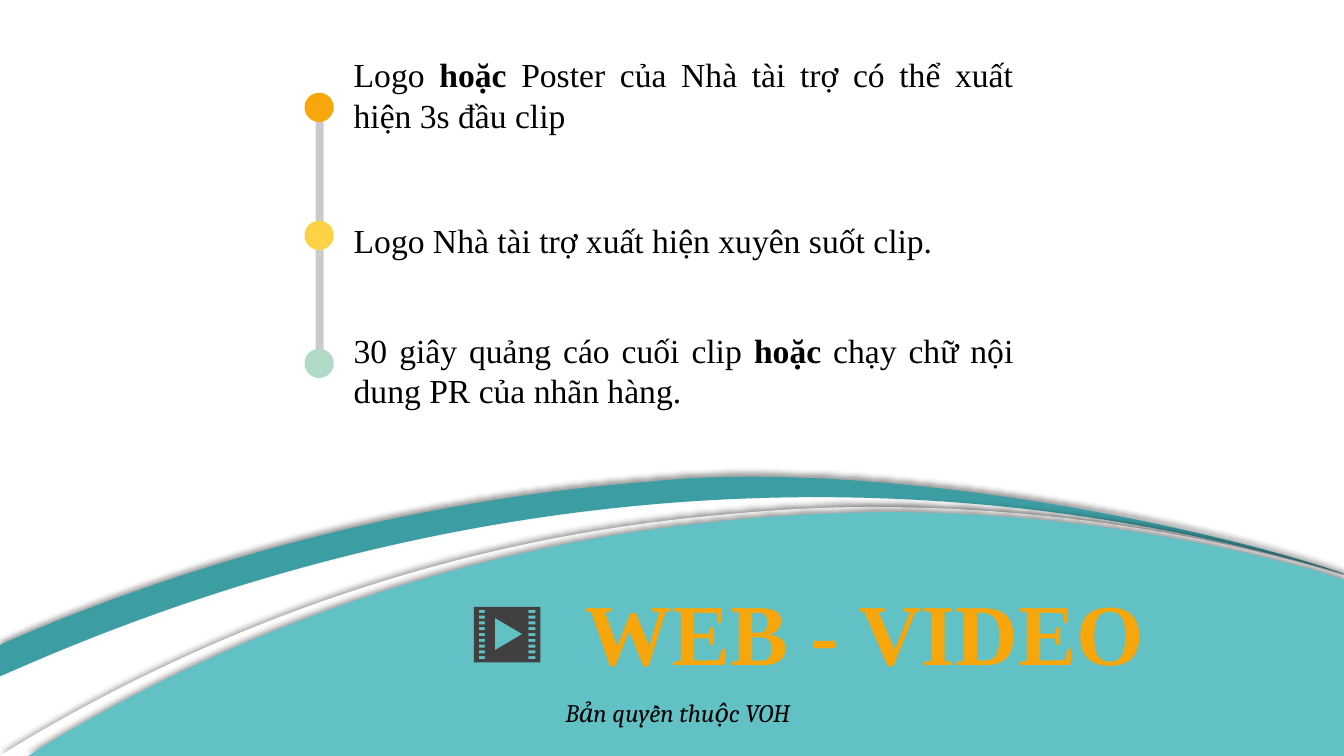
"""Build the WEB - VIDEO sponsorship slide."""
from lxml.etree import SubElement
from pptx import Presentation
from pptx.dml.color import RGBColor
from pptx.enum.shapes import MSO_SHAPE
from pptx.enum.text import MSO_AUTO_SIZE, PP_ALIGN
from pptx.oxml.ns import qn
from pptx.util import Inches, Pt

BLACK = RGBColor(0x00, 0x00, 0x00)
WHITE = RGBColor(0xFF, 0xFF, 0xFF)
DARK = RGBColor(0x40, 0x40, 0x40)
GREY = RGBColor(0xCB, 0xCB, 0xCB)
ORANGE = RGBColor(0xF7, 0xA6, 0x0B)
YELLOW = RGBColor(0xFD, 0xD2, 0x47)
MINT = RGBColor(0xB1, 0xD9, 0xC7)
TEAL = RGBColor(0x62, 0xC1, 0xC5)
DEEP = RGBColor(0x3C, 0x9D, 0xA2)
SERIF = "Times New Roman"

POINTS = [
    (0.49, 0.91, [("Logo ", False), ("hoặc ", True),
                  ("Poster của Nhà tài trợ có thể xuất hiện 3s đầu clip ", False)]),
    (2.13, 0.5, [("Logo Nhà tài trợ xuất hiện xuyên suốt clip.", False)]),
    (3.22, 0.91, [("30 giây quảng cáo cuối clip ", False), ("hoặc", True),
                  (" chạy chữ nội dung PR của nhãn hàng.", False)]),
]
TITLE = "WEB - VIDEO"
RIGHTS = "Bản quyền thuộc VOH"

DOTS = [ORANGE, YELLOW, MINT]
DOT_TOP, DOT_STEP, DOT_SIZE = 0.92, 1.27, 0.29

BAND = [(7.34, 4.73), (9.53, 4.71, 12.18, 5.28, 13.41, 5.72),
        (9, 4.38, 4.38, 4.79, 0.16, 6.64), (0, 6.71), (0, 6.4), (0.06, 6.37),
        (2.04, 5.51, 4.24, 4.95, 6.43, 4.78), (6.72, 4.75, 7.03, 4.73, 7.34, 4.73)]
RIM = [(8.64, 5.03), (10.15, 5.03, 11.63, 5.23, 13.03, 5.62), (13.33, 5.71),
       (13.33, 7.5), (0, 7.5), (0.14, 7.41), (2.21, 6.16, 4.58, 5.34, 7.13, 5.11),
       (7.64, 5.06, 8.14, 5.03, 8.64, 5.03)]
HILL = [(8.74, 5.08), (10.22, 5.08, 11.66, 5.28, 13.04, 5.66), (13.33, 5.75),
        (13.33, 7.5), (0.28, 7.5), (0.42, 7.41), (2.45, 6.18, 4.77, 5.39, 7.26, 5.16),
        (7.76, 5.11, 8.25, 5.09, 8.74, 5.08)]

HOLE_ROWS, HOLE_TOP, HOLE_LAST = 9, 6.05, 6.51
HOLE_COLS = [(4.75, 4.81), (5.24, 5.31)]
PLAY = [(4.91, 6.13), (4.91, 6.45), (5.18, 6.29)]

deck = Presentation()
deck.slide_width, deck.slide_height = Inches(13.33), Inches(7.5)
slide = deck.slides.add_slide(deck.slide_layouts[6])
shapes = slide.shapes


def paint(shape, color):
    shape.shadow.inherit = False
    shape.fill.solid()
    shape.fill.fore_color.rgb = color
    shape.line.fill.background()
    return shape


def outline(loops, color):
    loops = [[(Inches(x), Inches(y)) for x, y in loop] for loop in loops]
    pen = shapes.build_freeform(*loops[0][0])
    pen.add_line_segments(loops[0][1:])
    for loop in loops[1:]:
        pen.move_to(*loop[0])
        pen.add_line_segments(loop[1:])
    return paint(pen.convert_to_shape(), color)


def bend(shape, parts):
    lines = list(shape.element.spPr.iter(qn("a:lnTo")))
    for line, part in zip(lines, parts[1:]):
        if len(part) == 6:
            arc = line.makeelement(qn("a:cubicBezTo"))
            for x, y in zip(part[::2], part[1::2]):
                SubElement(arc, qn("a:pt"), x=str(Inches(x) - shape.left),
                           y=str(Inches(y) - shape.top))
            line.getparent().replace(line, arc)


def wave(parts, color):
    shape = outline([[part[-2:] for part in parts]], color)
    bend(shape, parts)
    effects = shape.element.spPr.find(qn("a:effectLst"))
    shade = SubElement(effects, qn("a:outerShdw"), blurRad=str(Pt(4)), dist=str(Pt(3)),
                       dir=str(270 * 60000), algn="b", rotWithShape="0")
    tint = SubElement(shade, qn("a:srgbClr"), val=str(BLACK))
    SubElement(tint, qn("a:alpha"), val="40000")


def write(box, runs, size, color=BLACK, face=SERIF, align=None, wrap=True, slant=None):
    frame = shapes.add_textbox(*map(Inches, box)).text_frame
    frame.word_wrap = wrap
    frame.auto_size = MSO_AUTO_SIZE.SHAPE_TO_FIT_TEXT
    para = frame.paragraphs[0]
    para.alignment = align
    for text, bold in runs:
        run = para.add_run()
        run.text = text
        font = run.font
        font.name, font.size = face, Pt(size)
        font.bold, font.italic = bold, slant
        font.color.rgb = color


def block(left, top, right, base):
    return [(left, top), (right, top), (right, base), (left, base)]


wave(BAND, DEEP)
wave(RIM, WHITE)

bar = map(Inches, (3.13, 1.18, 0.08, 2.3))
paint(shapes.add_shape(MSO_SHAPE.RECTANGLE, *bar), GREY)
for i, color in enumerate(DOTS):
    spot = map(Inches, (3.02, DOT_TOP + i * DOT_STEP, DOT_SIZE, DOT_SIZE))
    paint(shapes.add_shape(MSO_SHAPE.OVAL, *spot), color)

wave(HILL, TEAL)

for top, height, runs in POINTS:
    write((3.41, top, 6.74, height), runs, 24, align=PP_ALIGN.JUSTIFY)
write((5.36, 5.69, 6.44, 1.14), [(TITLE, True)], 62, ORANGE, align=PP_ALIGN.CENTER)

step = (HOLE_LAST - HOLE_TOP) / (HOLE_ROWS - 1)
tops = [HOLE_TOP + row * step for row in range(HOLE_ROWS)]
holes = [block(left, top, right, top + 0.03)[::-1]
         for top in tops for left, right in HOLE_COLS]
outline([block(4.7, 6.02, 5.36, 6.57), PLAY, *holes], DARK)

write((5.51, 6.87, 2.47, 0.4), [(RIGHTS, False)], 18, face="Cambria", wrap=False, slant=True)

deck.save("out.pptx")
